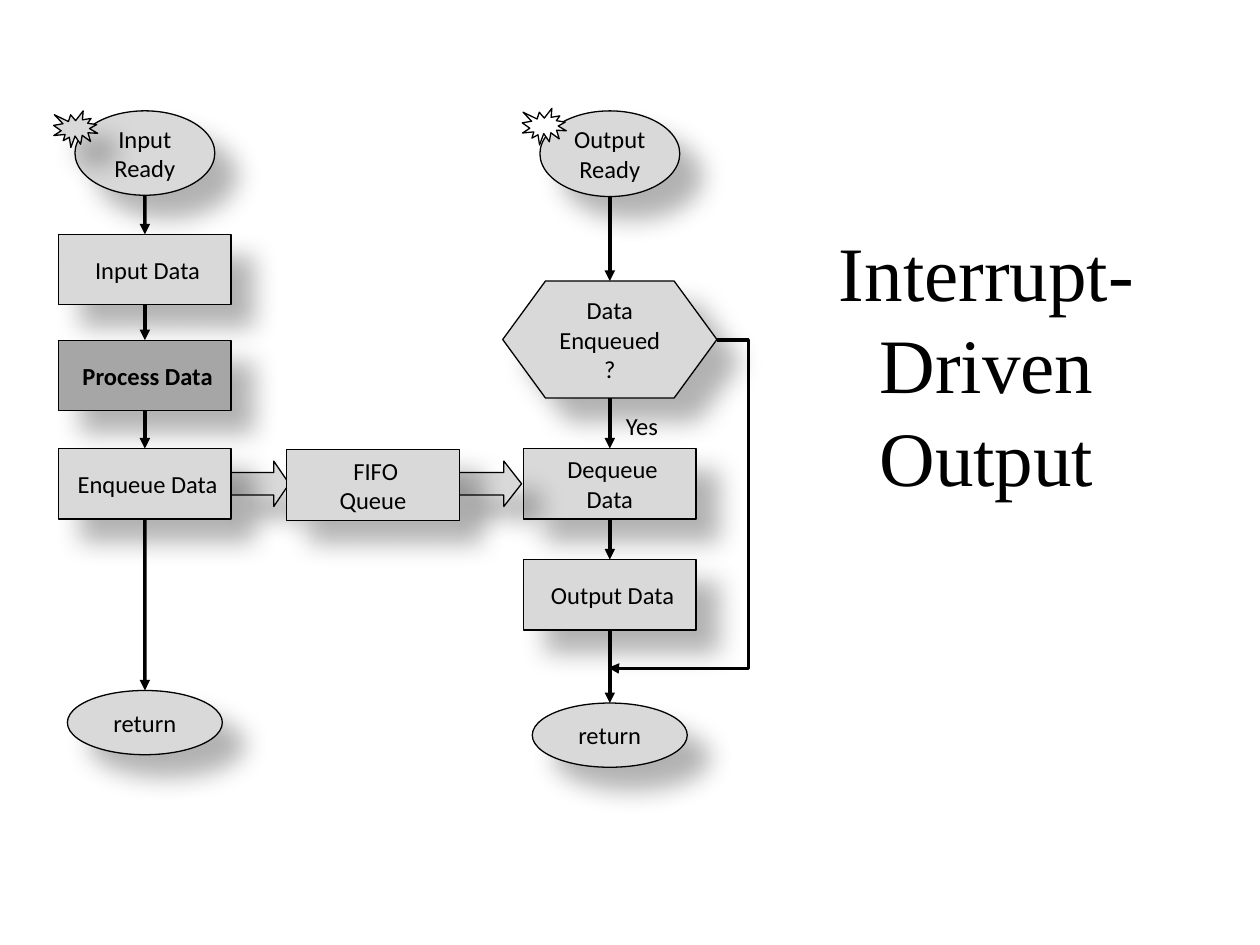
from dataclasses import dataclass

from lxml import etree
from pptx import Presentation
from pptx import util as u
from pptx.dml.color import RGBColor
from pptx.enum import shapes, text
from pptx.oxml.ns import qn

KIND = shapes.MSO_SHAPE
BLACK, WHITE, PALE, MID = "000000", "FFFFFF", "D9D9D9", "A6A6A6"
BOTTOM, TOP = 2, 0
LEFT_AXIS, RIGHT_AXIS = 1.15, 4.84


@dataclass
class Node:
    key: str
    kind: shapes.MSO_SHAPE
    center: float
    top: float
    width: float
    height: float
    paragraphs: tuple = ()
    fill: str = PALE
    bold: bool = False
    wraps: bool = False
    head: float | None = None
    shadow: bool = True


@dataclass
class Flow:
    x: float
    start: float
    end: float
    source: str = ""
    target: str = ""


def rgb(value: str) -> RGBColor:
    return RGBColor.from_string(value)


def write(frame, paragraphs: tuple, size: int = 14, font: str = "Calibri",
          bold: bool = False, align=text.PP_ALIGN.CENTER) -> None:
    for index, content in enumerate(paragraphs):
        paragraph = frame.paragraphs[0] if index == 0 else frame.add_paragraph()
        paragraph.alignment = align
        for number, line in enumerate(content.split("\n")):
            if number:
                paragraph.add_line_break()
            run = paragraph.add_run()
            run.text = line
            run.font.size = u.Pt(size)
            run.font.name = font
            run.font.bold = bold
            run.font.color.rgb = rgb(BLACK)


def add_shadow(shape) -> None:
    effects = shape._element.spPr.find(qn("a:effectLst"))
    shadow = etree.SubElement(
        effects, qn("a:outerShdw"), blurRad=str(u.Pt(15)), dist=str(u.Pt(18)),
        dir=str(45 * 60000), algn="tl", rotWithShape="0")
    color = etree.SubElement(shadow, qn("a:srgbClr"), val=BLACK)
    etree.SubElement(color, qn("a:alpha"), val="30000")


def add_node(slide, node: Node):
    shape = slide.shapes.add_shape(
        node.kind, u.Inches(node.center - node.width / 2), u.Inches(node.top),
        u.Inches(node.width), u.Inches(node.height))
    if node.head is not None:
        shape.adjustments[1] = node.head
    shape.fill.solid()
    shape.fill.fore_color.rgb = rgb(node.fill)
    shape.line.color.rgb = rgb(BLACK)
    shape.line.width = u.Pt(0.75)
    shape.shadow.inherit = False
    if node.shadow:
        add_shadow(shape)
    shape.text_frame.word_wrap = node.wraps
    shape.text_frame.vertical_anchor = text.MSO_ANCHOR.MIDDLE
    write(shape.text_frame, node.paragraphs, bold=node.bold)
    return shape


def add_line(slide, kind, start: tuple, end: tuple):
    line = slide.shapes.add_connector(
        kind, *(u.Inches(value) for value in (*start, *end)))
    line.line.color.rgb = rgb(BLACK)
    line.line.width = u.Pt(2)
    properties = line._element.spPr
    etree.SubElement(properties.find(qn("a:ln")), qn("a:tailEnd"), type="triangle")
    etree.SubElement(properties, qn("a:effectLst"))
    return line


def add_flow(slide, flow: Flow, nodes: dict) -> None:
    line = add_line(slide, shapes.MSO_CONNECTOR.STRAIGHT,
                    (flow.x, flow.start), (flow.x, flow.end))
    if flow.source:
        line.begin_connect(nodes[flow.source], BOTTOM)
    if flow.target:
        line.end_connect(nodes[flow.target], TOP)


def add_bypass(slide) -> None:
    line = add_line(slide, shapes.MSO_CONNECTOR.ELBOW, (5.69, 2.7), (4.83, 5.3))
    geometry = line._element.spPr.find(qn("a:prstGeom"))
    geometry.set("prst", "bentConnector4")
    guides = geometry.find(qn("a:avLst"))
    if guides is None:
        guides = etree.SubElement(geometry, qn("a:avLst"))
    for name, value in (("adj1", -29100), ("adj2", 100200)):
        etree.SubElement(guides, qn("a:gd"), name=name, fmla=f"val {value}")


def add_text(slide, box: tuple, content: str, anchor, **style) -> None:
    frame = slide.shapes.add_textbox(*(u.Inches(value) for value in box)).text_frame
    frame.word_wrap = True
    frame.vertical_anchor = anchor
    write(frame, (content,), **style)


def step(key: str, center: float, top: float, label: str, **options) -> Node:
    return Node(key, KIND.RECTANGLE, center, top, 1.37, 0.56, (label,), **options)


def terminal(key: str, center: float, top: float, width: float, height: float,
             *labels: str) -> Node:
    return Node(key, KIND.OVAL, center, top, width, height, labels)


NODES = [
    terminal("input ready", LEFT_AXIS, 0.88, 1.11, 0.67, "Input", "Ready"),
    terminal("output ready", RIGHT_AXIS, 0.88, 1.11, 0.68, "Output", "Ready"),
    Node("enqueue arrow", KIND.RIGHT_ARROW, 2.05, 3.66, 0.49, 0.36, head=0.34),
    step("input", LEFT_AXIS, 1.86, " Input Data"),
    step("process", LEFT_AXIS, 2.7, " Process Data", fill=MID, bold=True),
    step("enqueue", LEFT_AXIS, 3.56, " Enqueue Data"),
    Node("enqueued", KIND.FLOWCHART_PREPARATION, RIGHT_AXIS, 2.23, 1.7, 0.93,
         ("Data Enqueued?",), wraps=True),
    step("dequeue", RIGHT_AXIS, 3.56, " Dequeue Data", wraps=True),
    Node("dequeue arrow", KIND.RIGHT_ARROW, 3.86, 3.66, 0.56, 0.36, head=0.39),
    step("queue", 2.96, 3.57, " FIFO\nQueue"),
    step("output", RIGHT_AXIS, 4.44, " Output Data"),
    Node("input interrupt", KIND.EXPLOSION1, 0.6, 0.88, 0.35, 0.29),
    Node("output interrupt", KIND.EXPLOSION1, 4.32, 0.86, 0.35, 0.29,
         fill=WHITE, shadow=False),
    terminal("output return", RIGHT_AXIS, 5.58, 1.23, 0.51, "return"),
    terminal("input return", LEFT_AXIS, 5.48, 1.23, 0.51, "return"),
]

FLOWS = [
    Flow(LEFT_AXIS, 1.55, 1.86, target="input"),
    Flow(LEFT_AXIS, 2.42, 2.7, "input", "process"),
    Flow(LEFT_AXIS, 3.26, 3.56, "process", "enqueue"),
    Flow(LEFT_AXIS, 4.12, 5.48, "enqueue"),
    Flow(RIGHT_AXIS, 1.56, 2.23, target="enqueued"),
    Flow(RIGHT_AXIS, 3.16, 3.56, "enqueued", "dequeue"),
    Flow(RIGHT_AXIS, 4.12, 4.44, "dequeue", "output"),
    Flow(RIGHT_AXIS, 5, 5.58, "output"),
]


def main() -> None:
    deck = Presentation()
    deck.slide_width, deck.slide_height = u.Inches(10), u.Inches(7.5)
    slide = deck.slides.add_slide(deck.slide_layouts[6])
    nodes = {node.key: add_node(slide, node) for node in NODES}
    for flow in FLOWS:
        add_flow(slide, flow, nodes)
    add_bypass(slide)
    add_text(slide, (4.87, 3.21, 0.64, 0.34), "Yes", text.MSO_ANCHOR.TOP,
             align=text.PP_ALIGN.LEFT)
    add_text(slide, (6.08, 0.67, 3.5, 4.42), "Interrupt-Driven Output",
             text.MSO_ANCHOR.MIDDLE, size=44, font="Times New Roman")
    deck.save("out.pptx")


if __name__ == "__main__":
    main()
